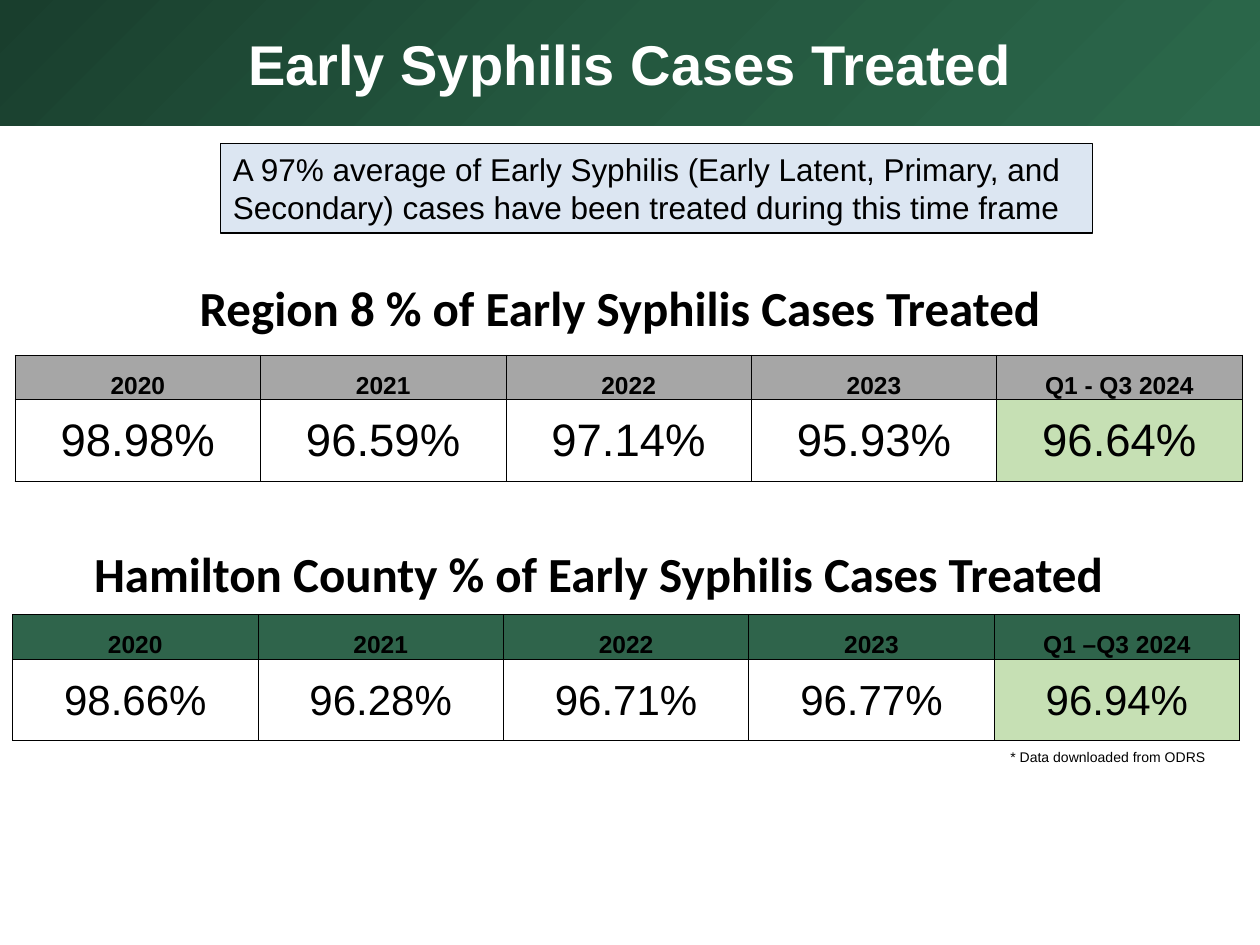
from copy import deepcopy

from lxml import etree
from pptx import Presentation
from pptx.dml.color import RGBColor
from pptx.enum.shapes import MSO_SHAPE
from pptx.enum.text import MSO_ANCHOR, PP_ALIGN
from pptx.oxml.ns import qn
from pptx.util import Inches, Pt

RECTANGLE = MSO_SHAPE.RECTANGLE
MIDDLE, BOTTOM, TOP = MSO_ANCHOR.MIDDLE, MSO_ANCHOR.BOTTOM, MSO_ANCHOR.TOP
CENTER, LEFT = PP_ALIGN.CENTER, PP_ALIGN.LEFT


def color(hex_string):
    return RGBColor.from_string(hex_string)


def write(frame, text, size, font="Arial", bold=False, ink="000000",
          align=CENTER, anchor=MIDDLE):
    frame.word_wrap = True
    frame.vertical_anchor = anchor
    para = frame.paragraphs[0]
    para.text = text
    para.alignment = align
    para.font.name = font
    para.font.size = Pt(size)
    para.font.bold = bold
    para.font.color.rgb = color(ink)


deck = Presentation()
deck.slide_width, deck.slide_height = Inches(10), Inches(7.5)
page = deck.slides.add_slide(deck.slide_layouts[5])
shapes = page.shapes

# Headings above the two tables
region_heading = shapes.title
region_heading.left, region_heading.top = Inches(0.42), Inches(1.81)
region_heading.width, region_heading.height = Inches(9), Inches(1.25)
county_heading = shapes.add_textbox(Inches(0.25), Inches(3.92), Inches(9), Inches(1.25))
for heading, place in ((region_heading, "Region 8"), (county_heading, "Hamilton County")):
    write(heading.text_frame, f"{place} % of Early Syphilis Cases Treated", 28,
          font="Calibri", bold=True)

# Treatment rate tables: left, top, header fill, value size, last period, values
rate_tables = [
    (0.12, 2.82, "A6A6A6", 26, "Q1 - Q3 2024",
     ["98.98%", "96.59%", "97.14%", "95.93%", "96.64%"]),
    (0.1, 4.88, "2F644B", 24, "Q1 –Q3 2024",
     ["98.66%", "96.28%", "96.71%", "96.77%", "96.94%"]),
]
for left, top, header_fill, value_size, last_period, values in rate_tables:
    periods = ["2020", "2021", "2022", "2023", last_period]
    table = shapes.add_table(2, len(periods), Inches(left), Inches(top),
                             Inches(9.74), Inches(1)).table
    table.horz_banding = False
    table.first_row = False
    table.rows[0].height, table.rows[1].height = Inches(0.35), Inches(0.65)
    for row, texts in enumerate((periods, values)):
        for column, text in enumerate(texts):
            cell = table.cell(row, column)
            cell.margin_left = cell.margin_right = cell.margin_top = Inches(0.01)
            cell.margin_bottom = 0
            is_header = row == 0
            write(cell.text_frame, text, 14 if is_header else value_size, bold=is_header)
            cell.vertical_anchor = BOTTOM if is_header else MIDDLE

            # Borders come before the fill in the cell properties
            properties = cell._tc.get_or_add_tcPr()
            for side in ("lnL", "lnR", "lnT", "lnB"):
                border = etree.SubElement(properties, qn(f"a:{side}"), w=str(Pt(0.5)))
                solid = etree.SubElement(border, qn("a:solidFill"))
                etree.SubElement(solid, qn("a:srgbClr"), val="000000")

            if is_header or column == len(texts) - 1:
                cell.fill.solid()
                cell.fill.fore_color.rgb = color(header_fill if is_header else "C6E0B4")
            else:
                cell.fill.background()

# Source note
note = shapes.add_textbox(Inches(7.92), Inches(5.89), Inches(2.33), Inches(0.24))
write(note.text_frame, "* Data downloaded from ODRS", 8, align=LEFT, anchor=TOP)

# Banner with a three-stop gradient
banner = shapes.add_shape(RECTANGLE, 0, 0, Inches(10), Inches(1))
banner.shadow.inherit = False
banner.line.fill.background()
banner.fill.gradient()
banner.fill.gradient_angle = 315
stop_list = banner._element.spPr.find(qn("a:gradFill")).find(qn("a:gsLst"))
stop_list.insert(1, deepcopy(stop_list[0]))
banner_stops = ((0, "193E2D"), (0.5, "24583F"), (1, "2B684B"))
for stop, (position, shade) in zip(banner.fill.gradient_stops, banner_stops):
    stop.position = position
    stop.color.rgb = color(shade)
write(banner.text_frame, "Early Syphilis Cases Treated", 32, bold=True, ink="FFFFFF")

# Summary box
summary = shapes.add_shape(RECTANGLE, Inches(1.75), Inches(1.14), Inches(6.92), Inches(0.71))
summary.shadow.inherit = False
summary.fill.solid()
summary.fill.fore_color.rgb = color("DCE6F2")
summary.line.color.rgb = color("000000")
summary.line.width = Pt(0.75)
write(summary.text_frame,
      "A 97% average of Early Syphilis (Early Latent, Primary, and Secondary) "
      "cases have been treated during this time frame",
      18, align=LEFT, anchor=TOP)

deck.save("out.pptx")
